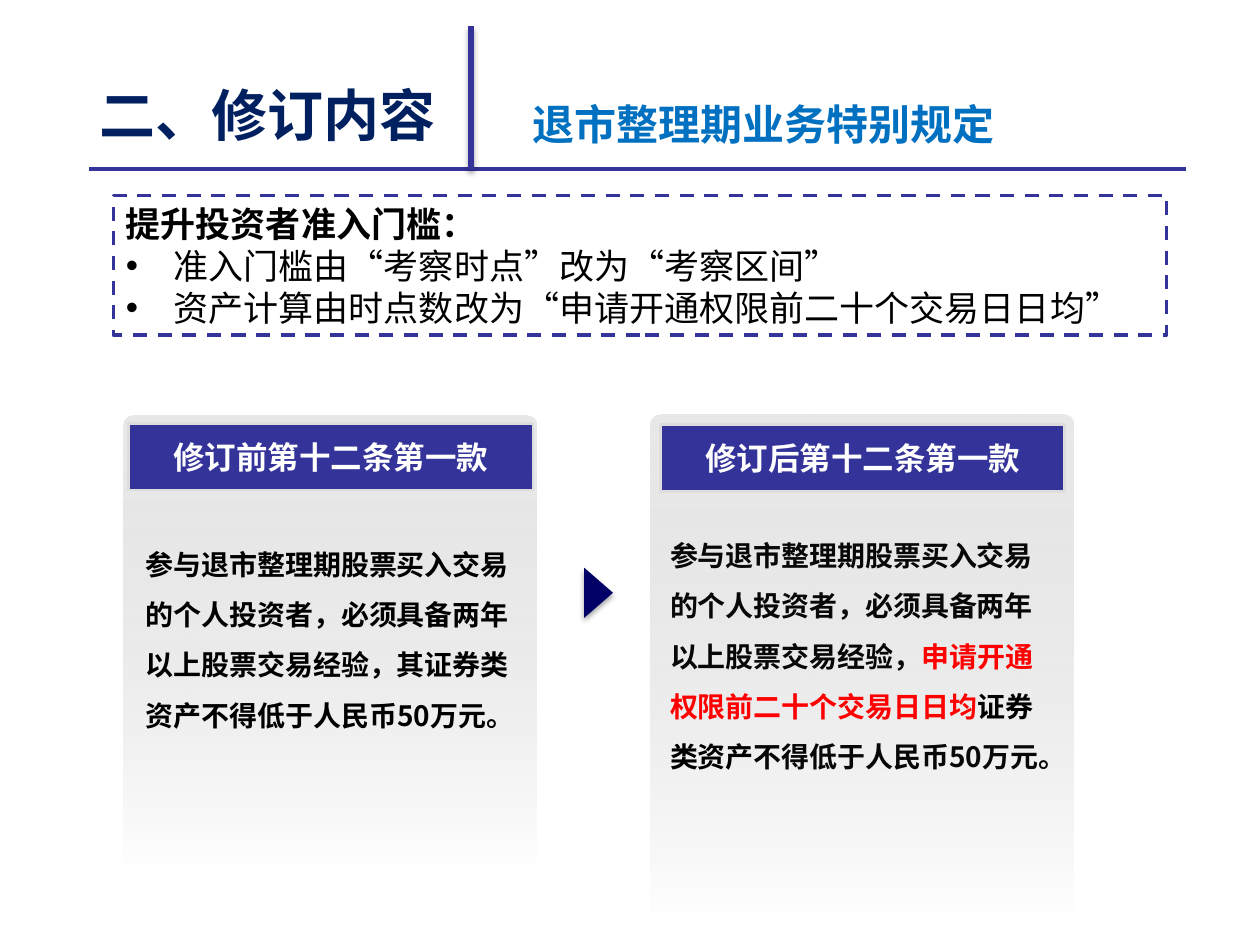
import pptx
import pptx.util
import pptx.dml.color
import pptx.enum.shapes
import pptx.enum.text
import pptx.oxml
import pptx.oxml.ns
from lxml import etree

Inches, Pt = pptx.util.Inches, pptx.util.Pt
RGB = pptx.dml.color.RGBColor.from_string
Kind = pptx.enum.shapes.MSO_SHAPE
Align = pptx.enum.text.PP_ALIGN
Anchor = pptx.enum.text.MSO_ANCHOR
qn = pptx.oxml.ns.qn
FONT = "Noto Sans CJK SC"
HUE = {"navy": "002060", "blue": "0070C0", "main": "333399", "dark": "000066",
       "black": "000000", "ink": "080808", "red": "FF0000", "white": "FFFFFF",
       "pale": "FEFEFE", "edge": "DDDDDD", "top": "E8E8E8", "base": "C7C7C7"}
SHADE = ('<a:outerShdw xmlns:a="http://schemas.openxmlformats.org/drawingml/2006/main" '
         'blurRad="39370" dist="22860" dir="5400000" rotWithShape="0">'
         '<a:srgbClr val="000000"><a:alpha val="35000"/></a:srgbClr></a:outerShdw>')


def write(para, text, size, hue, bold=True):
    run = para.add_run()
    run.text = text
    font = run.font
    font.size, font.bold, font.name = Pt(size), bold, FONT
    font.color.rgb = RGB(HUE[hue])
    etree.SubElement(run._r.get_or_add_rPr(), qn("a:ea")).set("typeface", FONT)


def block(kind, place, fill):
    shape = slide.shapes.add_shape(kind, *[Inches(n) for n in place])
    shape.shadow.inherit = False
    shape.fill.solid()
    shape.fill.fore_color.rgb = RGB(HUE[fill])
    shape.line.fill.background()
    return shape


deck = pptx.Presentation()
deck.slide_width, deck.slide_height = Inches(10), Inches(7.5)
slide = deck.slides.add_slide(deck.slide_layouts[6])

heads = [((0.71, 0.6, 4.76, 0.62), "二、修订内容", 32, "navy"),
         ((4.15, 0.74, 5.26, 0.49), "退市整理期业务特别规定", 24, "blue")]
for place, text, size, hue in heads:
    frame = slide.shapes.add_textbox(*[Inches(n) for n in place]).text_frame
    frame.word_wrap = True
    frame.margin_left = frame.margin_right = Inches(0.08)
    frame.margin_top = frame.margin_bottom = Inches(0.04)
    write(frame.paragraphs[0], text, size, hue)

note = block(Kind.RECTANGLE, (0.9, 1.55, 8.36, 1.11), "white")
note.line.color.rgb = RGB(HUE["main"])
note.line.width = Pt(2)
note.line.dash_style = pptx.enum.dml.MSO_LINE.DASH
frame = note.text_frame
frame.word_wrap = True
frame.vertical_anchor = Anchor.MIDDLE
frame.paragraphs[0].alignment = Align.LEFT
write(frame.paragraphs[0], "提升投资者准入门槛：", 20, "black")
for text in ["准入门槛由“考察时点”改为“考察区间”",
             "资产计算由时点数改为“申请开通权限前二十个交易日日均”"]:
    para = frame.add_paragraph()
    para.alignment = Align.LEFT
    props = para._p.get_or_add_pPr()
    props.set("marL", str(Inches(0.38)))
    props.set("indent", str(-Inches(0.38)))
    etree.SubElement(props, qn("a:buFont")).set("typeface", "Arial")
    etree.SubElement(props, qn("a:buChar")).set("char", "•")
    write(para, text, 20, "black", False)

cards = [
    ((0.98, 3.3, 3.28, 3.61), (1.02, 3.36, 3.21, 0.53), (1.06, 4.16, 3.09, 1.72),
     [("修订前", "pale"), ("第十二条第一款", "white")],
     [("参与退市整理期股票买入交易的个人投资者，必须具备两年以上股票交易经验，"
       "其证券类资产不得低于人民币50万元。", "black")]),
    ((5.16, 3.29, 3.36, 4), (5.24, 3.37, 3.21, 0.53), (5.22, 4.09, 3.24, 2.12),
     [("修订后第十二条第一款", "pale")],
     [("参与退市整理期股票买入交易的个人投资者，必须具备两年以上股票交易经验，", "ink"),
      ("申请开通权限前二十个交易日日均", "red"),
      ("证券类资产", "black"),
      ("不得低于人民币50万元。", "ink")]),
]
for back, bar, area, title, body in cards:
    card = block(Kind.ROUNDED_RECTANGLE, back, "top")
    card.adjustments[0] = 0.023
    card.fill.gradient()
    card.fill.gradient_angle = 270
    for stop, hue, spot in zip(card.fill.gradient_stops, ("top", "base"), (0, 1)):
        stop.color.rgb = RGB(HUE[hue])
        stop.position = spot
    clear = card._element.spPr.findall(".//" + qn("a:srgbClr"))[-1]
    etree.SubElement(clear, qn("a:alpha")).set("val", "0")

    label = block(Kind.ROUNDED_RECTANGLE, bar, "main")
    label.adjustments[0] = 0
    label.line.color.rgb = RGB(HUE["edge"])
    label.line.width = Pt(1.5)
    frame = label.text_frame
    frame.word_wrap = False
    frame.vertical_anchor = Anchor.MIDDLE
    frame.paragraphs[0].alignment = Align.CENTER
    for text, hue in title:
        write(frame.paragraphs[0], text, 18, hue)

    frame = slide.shapes.add_textbox(*[Inches(n) for n in area]).text_frame
    frame.word_wrap = True
    frame.paragraphs[0].line_spacing = 1.5
    for text, hue in body:
        write(frame.paragraphs[0], text, 16, hue)

arrow = block(Kind.ISOSCELES_TRIANGLE, (4.55, 4.59, 0.4, 0.23), "dark")
arrow.rotation = 90
arrow._element.spPr.find(qn("a:effectLst")).append(pptx.oxml.parse_xml(SHADE))

rules = [((0.71, 1.34, 9.41, 1.34), 2, False), ((3.74, 0.21, 3.74, 1.35), 3.5, True)]
for ends, width, deep in rules:
    rule = slide.shapes.add_connector(
        pptx.enum.shapes.MSO_CONNECTOR.STRAIGHT, *[Inches(n) for n in ends])
    rule.line.color.rgb = RGB(HUE["main"])
    rule.line.width = Pt(width)
    effect = etree.SubElement(rule._element.spPr, qn("a:effectLst"))
    if deep:
        effect.append(pptx.oxml.parse_xml(SHADE))

deck.save("out.pptx")
